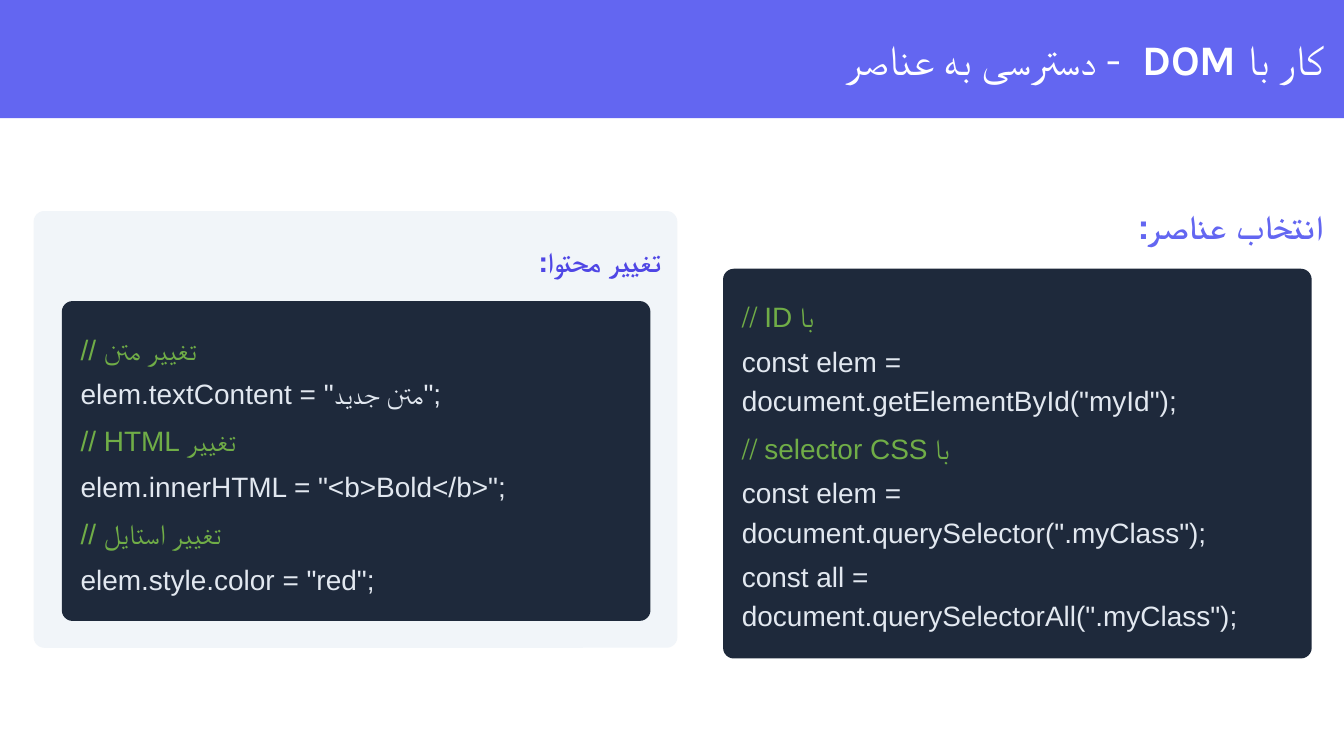
import lxml.etree
import pptx
import pptx.dml.color
import pptx.enum.shapes
import pptx.enum.text
import pptx.oxml.ns
import pptx.util

Inches = pptx.util.Inches
Pt = pptx.util.Pt
RGBColor = pptx.dml.color.RGBColor
MSO_SHAPE = pptx.enum.shapes.MSO_SHAPE
PP_ALIGN = pptx.enum.text.PP_ALIGN

INDIGO = RGBColor(0x63, 0x66, 0xF1)
DARK_INDIGO = RGBColor(0x4F, 0x46, 0xE5)
NAVY = RGBColor(0x1E, 0x29, 0x3B)
PALE = RGBColor(0xF1, 0xF5, 0xF9)
COMMENT_GREEN = RGBColor(0x70, 0xAD, 0x47)
CODE_GRAY = RGBColor(0xE2, 0xE8, 0xF0)
WHITE = RGBColor(0xFF, 0xFF, 0xFF)

presentation = pptx.Presentation()
presentation.slide_width = Inches(10)
presentation.slide_height = Inches(10 * 9 / 16)
slide = presentation.slides.add_slide(presentation.slide_layouts[5])


def add_panel(kind, left, top, width, height, color, radius=0):
    panel = slide.shapes.add_shape(
        kind, Inches(left), Inches(top), Inches(width), Inches(height))
    panel.shadow.inherit = False
    panel.fill.solid()
    panel.fill.fore_color.rgb = color
    panel.line.fill.background()
    if radius:
        panel.adjustments[0] = radius / min(width, height)


def write_text(shape, runs, font_name, size, color, spacing, align, rtl=False):
    frame = shape.text_frame
    frame.word_wrap = True
    frame.auto_size = pptx.enum.text.MSO_AUTO_SIZE.NONE
    frame.vertical_anchor = pptx.enum.text.MSO_ANCHOR.TOP
    frame.margin_left = frame.margin_right = 0
    frame.margin_top = frame.margin_bottom = 0
    paragraph = frame.paragraphs[0]
    paragraph.alignment = align
    paragraph.line_spacing = Pt(spacing)
    if rtl:
        paragraph._p.get_or_add_pPr().set("rtl", "1")
    for text, bold in runs:
        run = paragraph.add_run()
        run.text = text
        run.font.name = font_name
        run.font.size = Pt(size)
        run.font.bold = bold
        run.font.color.rgb = color
    return paragraph


add_panel(MSO_SHAPE.RECTANGLE, 0, 0, 10, 0.88, INDIGO)
add_panel(MSO_SHAPE.ROUNDED_RECTANGLE, 5.38, 2, 4.38, 2.9, NAVY, 0.08)
add_panel(MSO_SHAPE.ROUNDED_RECTANGLE, 0.25, 1.57, 4.79, 3.25, PALE, 0.08)
add_panel(MSO_SHAPE.ROUNDED_RECTANGLE, 0.46, 2.24, 4.38, 2.38, NAVY, 0.08)

title = slide.shapes.title
title.left, title.top = Inches(4.99), Inches(0.25)
title.width, title.height = Inches(4.86), Inches(0.38)
title.element.getparent().append(title.element)
title_runs = [("کار با ", False), ("DOM ", True), (" - دسترسی به عناصر", False)]
title_paragraph = write_text(
    title, title_runs, "Karla", 22.5, WHITE, 27, PP_ALIGN.RIGHT, rtl=True)
last_run_properties = title_paragraph.runs[-1]._r.get_or_add_rPr()
lxml.etree.SubElement(
    last_run_properties, pptx.oxml.ns.qn("a:cs"), typeface="Karla")

headings = [
    ("انتخاب عناصر:", 5.38, 1.5, 0.33, 18, 24, INDIGO),
    ("تغییر محتوا:", 0.46, 1.78, 0.29, 15, 21, DARK_INDIGO),
]
for text, left, top, height, size, spacing, color in headings:
    heading = slide.shapes.add_textbox(
        Inches(left), Inches(top), Inches(4.46), Inches(height))
    write_text(heading, [(text, True)], "Arial", size, color, spacing,
               PP_ALIGN.RIGHT, rtl=True)

code_columns = [
    (5.52, [
        (2.19, 1, 3, "با ID //"),
        (2.52, 2, 3, 'const elem = document.getElementById("myId");'),
        (3.17, 1, 4.5, "با selector CSS //"),
        (3.5, 2, 3, 'const elem = document.querySelector(".myClass");'),
        (4.12, 2, 3, 'const all = document.querySelectorAll(".myClass");'),
    ]),
    (0.6, [
        (2.43, 1, 3, "// تغییر متن"),
        (2.76, 1, 3, 'elem.textContent = "متن جدید";'),
        (3.11, 1, 4.5, "// HTML تغییر"),
        (3.45, 1, 3, 'elem.innerHTML = "<b>Bold</b>";'),
        (3.8, 1, 4.5, "// تغییر استایل"),
        (4.14, 1, 3, 'elem.style.color = "red";'),
    ]),
]
for left, code_lines in code_columns:
    for top, line_count, space_before, text in code_lines:
        code_box = slide.shapes.add_textbox(
            Inches(left), Inches(top), Inches(4.17), Inches(0.29 * line_count))
        color = COMMENT_GREEN if "//" in text else CODE_GRAY
        paragraph = write_text(code_box, [(text, False)], "Arial", 15, color, 21,
                               PP_ALIGN.LEFT, rtl=text.endswith("//"))
        paragraph.space_before = Pt(space_before)
        paragraph.space_after = Pt(3)

presentation.save("out.pptx")
